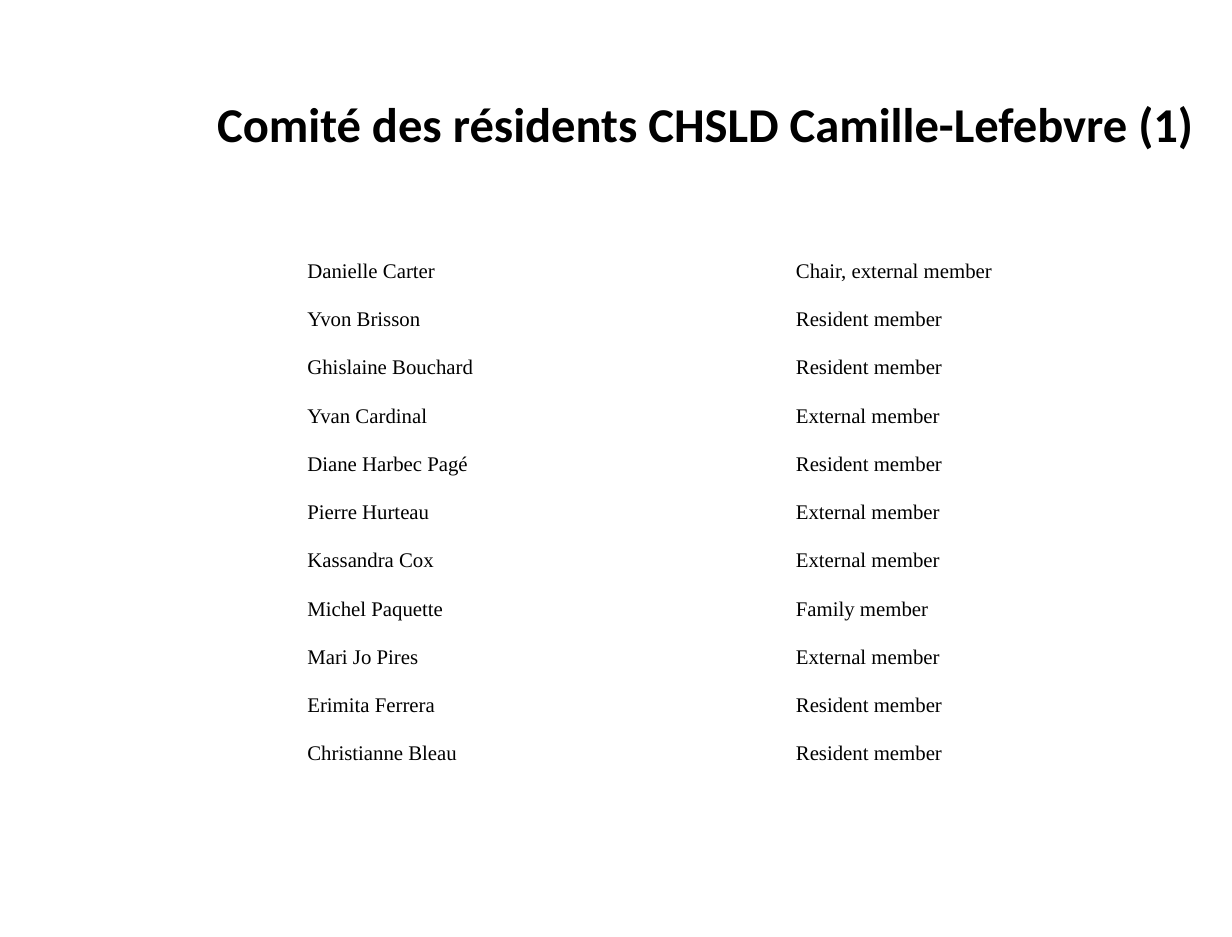
from lxml import etree
from pptx import Presentation
from pptx.dml.color import RGBColor
from pptx.enum.text import MSO_ANCHOR, PP_ALIGN
from pptx.oxml.ns import qn
from pptx.util import Inches, Pt

LEFT = PP_ALIGN.LEFT
TOP, MIDDLE = MSO_ANCHOR.TOP, MSO_ANCHOR.MIDDLE

COLORS = {"text": "000000", "paper": "FFFFFF", "border": "FFFFFF"}
TITLE = "Comité des résidents CHSLD Camille-Lefebvre (1)"
COLUMN_WIDTHS = (3.91, 3.05)
MEMBERS = [
    ("Danielle Carter", "Chair, external member"),
    ("Yvon Brisson", "Resident member"),
    ("Ghislaine Bouchard", "Resident member"),
    ("Yvan Cardinal", "External member"),
    ("Diane Harbec Pagé", "Resident member"),
    ("Pierre Hurteau", "External member"),
    ("Kassandra Cox", "External member"),
    ("Michel Paquette", "Family member"),
    ("Mari Jo Pires", "External member"),
    ("Erimita Ferrera", "Resident member"),
    ("Christianne Bleau", "Resident member"),
]


def write_text(frame, text, *, font, size, bold=False, line_spacing=1.0):
    paragraph = frame.paragraphs[0]
    paragraph.alignment = LEFT
    paragraph.line_spacing = line_spacing
    run = paragraph.add_run()
    run.text = text
    run.font.name = font
    run.font.size = Pt(size)
    run.font.bold = bold
    run.font.color.rgb = RGBColor.from_string(COLORS["text"])


def add_title(slide, text):
    title = slide.shapes.add_textbox(
        Inches(1.64), Inches(0.29), Inches(8.5), Inches(1.45))
    title.text_frame.word_wrap = True
    title.text_frame.vertical_anchor = MIDDLE
    write_text(title.text_frame, text, font="Calibri", size=28, bold=True,
               line_spacing=0.9)


def set_borders(cell, color, width):
    properties = cell._tc.get_or_add_tcPr()
    # Border lines come before the fill in the cell properties
    for position, side in enumerate(("a:lnL", "a:lnR", "a:lnT", "a:lnB")):
        line = etree.Element(qn(side), w=str(Pt(width)))
        fill = etree.SubElement(line, qn("a:solidFill"))
        etree.SubElement(fill, qn("a:srgbClr"), val=color)
        properties.insert(position, line)


def add_member_table(slide, members):
    table = slide.shapes.add_table(
        len(members), len(COLUMN_WIDTHS),
        Inches(2.36), Inches(2.03), Inches(sum(COLUMN_WIDTHS)), Inches(4.25),
    ).table
    table.first_row = False
    table.horz_banding = False
    for column, width in zip(table.columns, COLUMN_WIDTHS):
        column.width = Inches(width)
    for row, member in zip(table.rows, members):
        for cell, text in zip(row.cells, member):
            cell.vertical_anchor = TOP
            cell.fill.background()
            set_borders(cell, COLORS["border"], 0.75)
            write_text(cell.text_frame, text, font="Times New Roman", size=12)


def main():
    prs = Presentation()
    prs.slide_width, prs.slide_height = Inches(9.86), Inches(7.5)
    slide = prs.slides.add_slide(prs.slide_layouts[6])
    background = slide.background.fill
    background.solid()
    background.fore_color.rgb = RGBColor.from_string(COLORS["paper"])

    # Committee name
    add_title(slide, TITLE)
    # Members and their roles
    add_member_table(slide, MEMBERS)

    prs.save("out.pptx")


if __name__ == "__main__":
    main()
